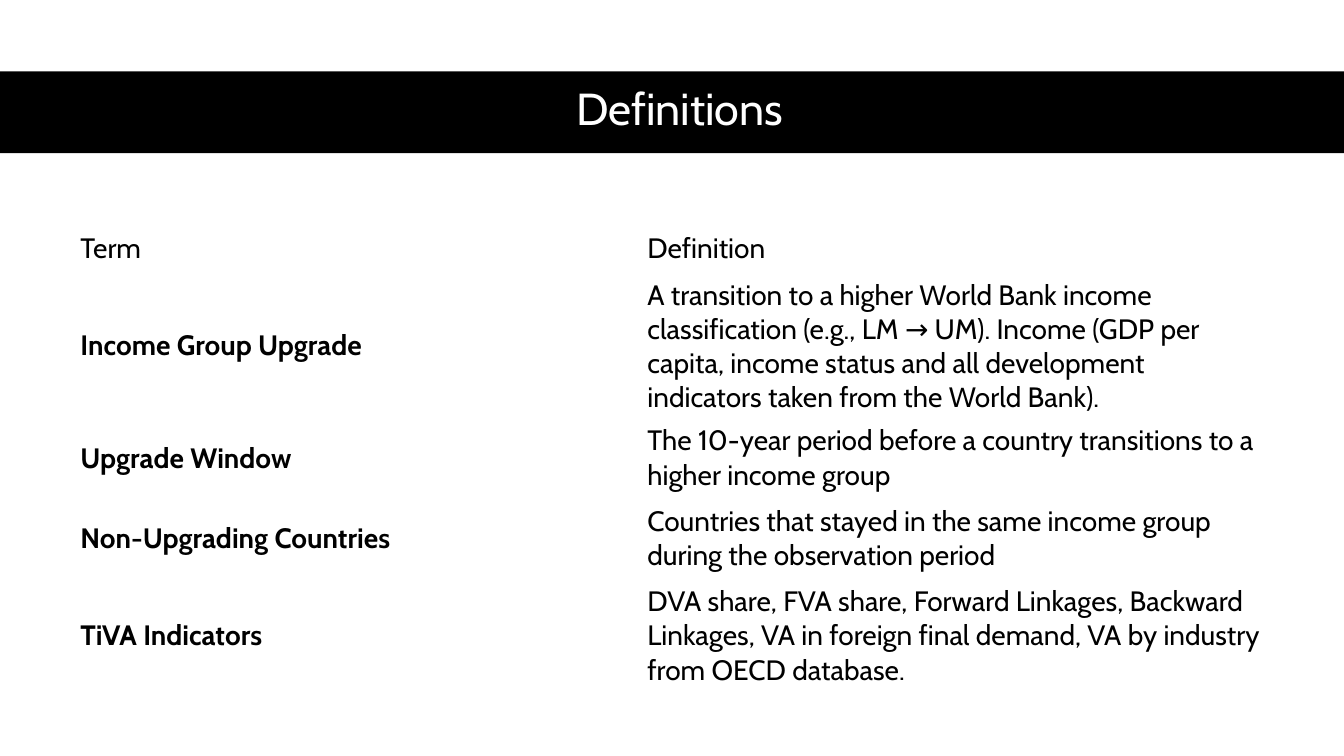
from typing import NamedTuple

from pptx import Presentation
from pptx.dml.color import RGBColor
from pptx.enum.shapes import MSO_SHAPE
from pptx.enum.text import MSO_ANCHOR, PP_ALIGN
from pptx.slide import Slide
from pptx.table import _Cell
from pptx.text.text import _Paragraph
from pptx.util import Emu, Pt

EMU_PER_PX = 9525
BLACK = RGBColor(0x00, 0x00, 0x00)
WHITE = RGBColor(0xFF, 0xFF, 0xFF)
TERM_FORMAT = {"name": "Cabin", "size": Pt(20), "bold": False}
HEADING_FORMAT = {"name": "Cabin", "size": Pt(32), "bold": False}


class Entry(NamedTuple):
    term: str
    definition: str
    height: int
    bold_term: bool = True


ENTRIES = [
    Entry("Term", "Definition", 46, bold_term=False),
    Entry(
        "Income Group Upgrade",
        "A transition to a higher World Bank income classification "
        "(e.g., LM → UM). Income (GDP per capita, income status and all "
        "development indicators taken from the World Bank).",
        77,
    ),
    Entry(
        "Upgrade Window",
        "The 10-year period before a country transitions to a higher income group",
        77,
    ),
    Entry(
        "Non-Upgrading Countries",
        "Countries that stayed in the same income group during the observation period",
        77,
    ),
    Entry(
        "TiVA Indicators",
        "DVA share, FVA share, Forward Linkages, Backward Linkages, "
        "VA in foreign final demand, VA by industry from OECD database.",
        108,
    ),
]
COLUMN_WIDTHS = [540, 605]


def px(length: int) -> Emu:
    return Emu(length * EMU_PER_PX)


def write(paragraph: _Paragraph, wording: str, formats: dict, color: RGBColor) -> None:
    run = paragraph.add_run()
    run.text = wording
    for attribute, value in formats.items():
        setattr(run.font, attribute, value)
    run.font.color.rgb = color


def draw_heading(slide: Slide) -> None:
    band = slide.shapes.add_shape(MSO_SHAPE.RECTANGLE, 0, px(68), px(1280), px(78))
    band.shadow.inherit = False
    band.fill.solid()
    band.fill.fore_color.rgb = BLACK
    band.line.fill.background()

    heading = slide.shapes.add_textbox(px(59), px(67), px(1177), px(78)).text_frame
    heading.word_wrap = True
    heading.vertical_anchor = MSO_ANCHOR.MIDDLE
    paragraph = heading.paragraphs[0]
    paragraph.alignment = PP_ALIGN.CENTER
    paragraph.line_spacing = 0.9
    write(paragraph, "Definitions", HEADING_FORMAT, WHITE)


def fill_cell(cell: _Cell, wording: str, bold: bool) -> None:
    cell.fill.background()
    cell.vertical_anchor = MSO_ANCHOR.MIDDLE
    write(cell.text_frame.paragraphs[0], wording, TERM_FORMAT | {"bold": bold}, BLACK)


def draw_glossary(slide: Slide, entries: list[Entry]) -> None:
    glossary = slide.shapes.add_table(
        len(entries), len(COLUMN_WIDTHS), px(67), px(214),
        px(sum(COLUMN_WIDTHS)), px(sum(entry.height for entry in entries)),
    ).table
    glossary.first_row = False
    glossary.horz_banding = False
    for column, width in zip(glossary.columns, COLUMN_WIDTHS):
        column.width = px(width)
    for row, entry in zip(glossary.rows, entries):
        row.height = px(entry.height)
        fill_cell(row.cells[0], entry.term, entry.bold_term)
        fill_cell(row.cells[1], entry.definition, False)


def main() -> None:
    presentation = Presentation()
    presentation.slide_width = px(1280)
    presentation.slide_height = px(720)
    slide = presentation.slides.add_slide(presentation.slide_layouts[6])
    draw_heading(slide)
    draw_glossary(slide, ENTRIES)
    presentation.save("out.pptx")


if __name__ == "__main__":
    main()
